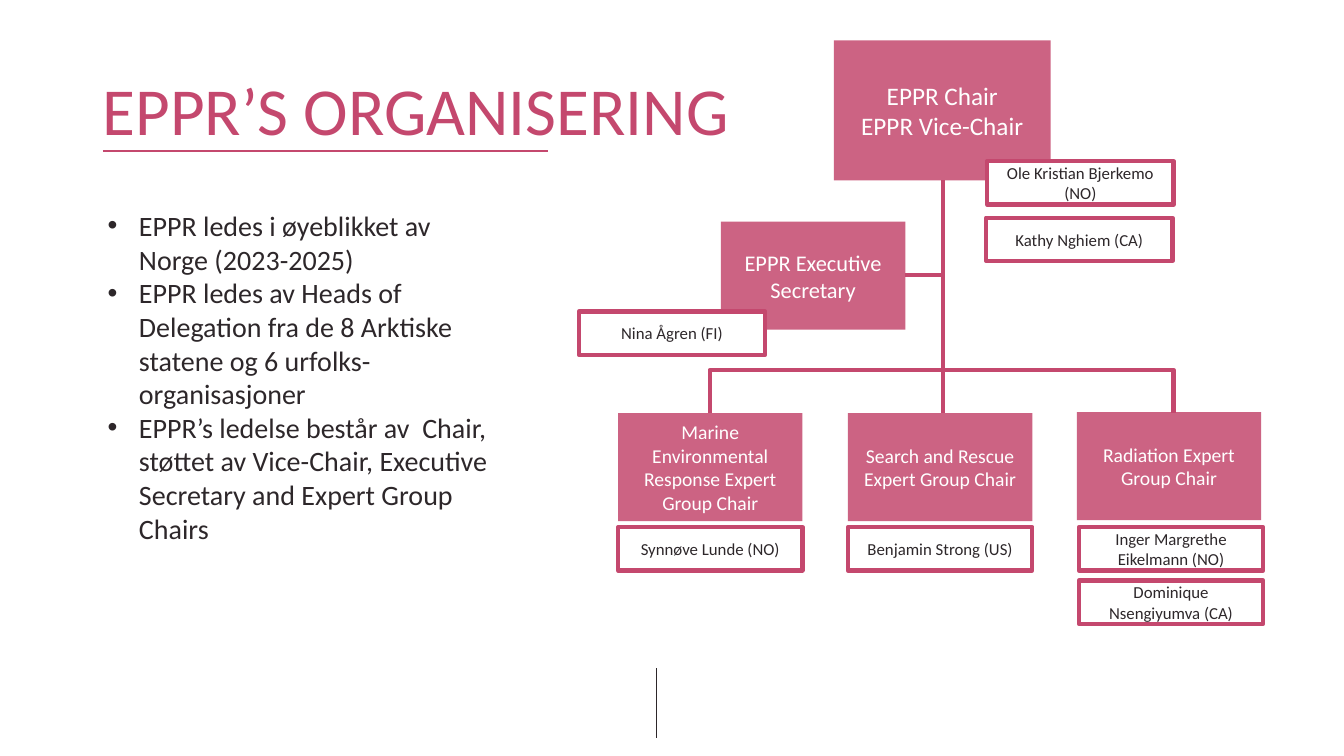
from dataclasses import dataclass
from typing import Any

import pptx
import pptx.dml.color
import pptx.enum.shapes
import pptx.enum.text
import pptx.oxml
import pptx.oxml.ns
import pptx.util

Inches = pptx.util.Inches
Pt = pptx.util.Pt
RGBColor = pptx.dml.color.RGBColor
Anchor = pptx.enum.text.MSO_ANCHOR
Align = pptx.enum.text.PP_ALIGN
Connector = pptx.enum.shapes.MSO_CONNECTOR
qn = pptx.oxml.ns.qn

ROSE = RGBColor(0xC4, 0x48, 0x6E)
INK = RGBColor(0x2D, 0x27, 0x2A)
WHITE = RGBColor(0xFF, 0xFF, 0xFF)
FONT = "Calibri"
ROLE_OPACITY = 85


@dataclass(frozen=True)
class Box:
    lines: tuple[str, ...]
    left: float
    top: float
    width: float
    height: float
    size: int


@dataclass(frozen=True)
class Line:
    start: tuple[float, float]
    end: tuple[float, float]
    width: float = 3
    color: RGBColor = ROSE
    bent: bool = False


def role(lines: tuple[str, ...], left: float, top: float, size: int) -> Box:
    return Box(lines, left, top, 1.83, 1.07, size)


def person(name: str, left: float, top: float, width: float = 1.83) -> Box:
    return Box((name,), left, top, width, 0.43, 12)


RULES = [
    Line((6.51, 6.63), (6.51, 7.32), 0.5, INK),
    Line((1.02, 1.5), (5.44, 1.5), 1.5),
]
ROLES = [
    Box(("EPPR Chair", "EPPR Vice-Chair"), 8.27, 0.4, 2.15, 1.39, 18),
    role(("EPPR Executive Secretary",), 7.15, 2.2, 16),
    role(("Search and Rescue Expert Group Chair",), 8.41, 4.1, 14),
    role(("Marine Environmental Response Expert Group Chair",), 6.13, 4.1, 14),
    role(("Radiation Expert Group Chair",), 10.68, 4.09, 14),
]
BRANCHES = [
    Line((9.35, 1.79), (9.35, 4.1)),
    Line((8.98, 2.73), (9.33, 2.73)),
    Line((9.37, 3.67), (11.64, 4.1), bent=True),
    Line((9.33, 3.67), (7.04, 4.1), bent=True),
]
PEOPLE = [
    person("Ole Kristian Bjerkemo (NO)", 9.79, 1.6, 1.85),
    person("Nina Ågren (FI)", 5.74, 3.09, 1.85),
    person("Synnøve Lunde (NO)", 6.13, 5.23),
    person("Benjamin Strong (US)", 8.41, 5.23),
    person("Inger Margrethe Eikelmann (NO)", 10.7, 5.23),
    person("Dominique Nsengiyumva (CA)", 10.7, 5.76),
    person("Kathy Nghiem (CA)", 9.78, 2.16, 1.85),
]
TITLE = Box(("EPPR’S ORGANISERING",), 0.92, 0.4, 11.5, 1.45, 48)
BULLETS = Box(
    (
        "EPPR ledes i øyeblikket av Norge (2023-2025)",
        "EPPR ledes av Heads of Delegation fra de 8 Arktiske statene og 6 urfolks-organisasjoner",
        "EPPR’s ledelse består av  Chair, støttet av Vice-Chair, Executive Secretary and Expert Group Chairs",
    ),
    0.97, 2.02, 4.04, 4.07, 20,
)


def set_attributes(target: Any, values: dict[str, Any]) -> None:
    for name, value in values.items():
        setattr(target, name, value)


def place(box: Box) -> tuple[int, ...]:
    return tuple(Inches(length) for length in (box.left, box.top, box.width, box.height))


def add_bullet(paragraph: Any) -> None:
    properties = paragraph._p.get_or_add_pPr()
    properties.set("marL", str(Inches(0.31)))
    properties.set("indent", str(Inches(-0.31)))
    properties.append(pptx.oxml.parse_xml(
        f'<a:buFont {pptx.oxml.ns.nsdecls("a")} typeface="Arial"/>'))
    properties.append(pptx.oxml.parse_xml(
        f'<a:buChar {pptx.oxml.ns.nsdecls("a")} char="•"/>'))


def write(shape: Any, box: Box, color: RGBColor, anchor: Any, alignment: Any,
          spacing: float = 1.0, bulleted: bool = False) -> None:
    frame = shape.text_frame
    set_attributes(frame, {"word_wrap": True, "vertical_anchor": anchor})
    frame.text = "\n".join(box.lines)
    for paragraph in frame.paragraphs:
        set_attributes(paragraph, {"alignment": alignment, "line_spacing": spacing})
        if bulleted:
            add_bullet(paragraph)
        set_attributes(paragraph.runs[0].font, {"name": FONT, "size": Pt(box.size)})
        paragraph.runs[0].font.color.rgb = color


def add_line(slide: Any, line: Line) -> None:
    kind = Connector.ELBOW if line.bent else Connector.STRAIGHT
    points = [Inches(value) for value in (*line.start, *line.end)]
    connector = slide.shapes.add_connector(kind, *points)
    set_attributes(connector.line, {"width": Pt(line.width)})
    connector.line.color.rgb = line.color
    properties = connector._element.spPr
    if line.bent:
        properties.find(qn("a:prstGeom")).set("prst", "bentConnector2")
    properties.append(pptx.oxml.parse_xml(f'<a:effectLst {pptx.oxml.ns.nsdecls("a")}/>'))


def add_box(slide: Any, box: Box, fill: RGBColor, text_color: RGBColor) -> Any:
    shape = slide.shapes.add_shape(pptx.enum.shapes.MSO_SHAPE.RECTANGLE, *place(box))
    shape.shadow.inherit = False
    shape.fill.solid()
    shape.fill.fore_color.rgb = fill
    write(shape, box, text_color, Anchor.MIDDLE, Align.CENTER)
    return shape


def add_role(slide: Any, box: Box) -> None:
    shape = add_box(slide, box, ROSE, WHITE)
    shape.line.fill.background()
    color = shape._element.spPr.find(qn("a:solidFill")).find(qn("a:srgbClr"))
    color.append(pptx.oxml.parse_xml(
        f'<a:alpha {pptx.oxml.ns.nsdecls("a")} val="{ROLE_OPACITY * 1000}"/>'))


def add_person(slide: Any, box: Box) -> None:
    shape = add_box(slide, box, WHITE, INK)
    shape.line.color.rgb = ROSE
    shape.line.width = Pt(3)


def main() -> None:
    presentation = pptx.Presentation()
    set_attributes(presentation, {"slide_width": Inches(13.33), "slide_height": Inches(7.5)})
    slide = presentation.slides.add_slide(presentation.slide_layouts[6])

    # Rules and title
    for line in RULES:
        add_line(slide, line)
    title = slide.shapes.add_textbox(*place(TITLE))
    write(title, TITLE, ROSE, Anchor.MIDDLE, Align.LEFT, spacing=0.9)

    # Organisation chart
    for box in ROLES:
        add_role(slide, box)
    for line in BRANCHES:
        add_line(slide, line)
    for box in PEOPLE:
        add_person(slide, box)

    # Bullet list
    bullets = slide.shapes.add_textbox(*place(BULLETS))
    write(bullets, BULLETS, INK, Anchor.TOP, Align.LEFT, bulleted=True)

    presentation.save("out.pptx")


if __name__ == "__main__":
    main()
